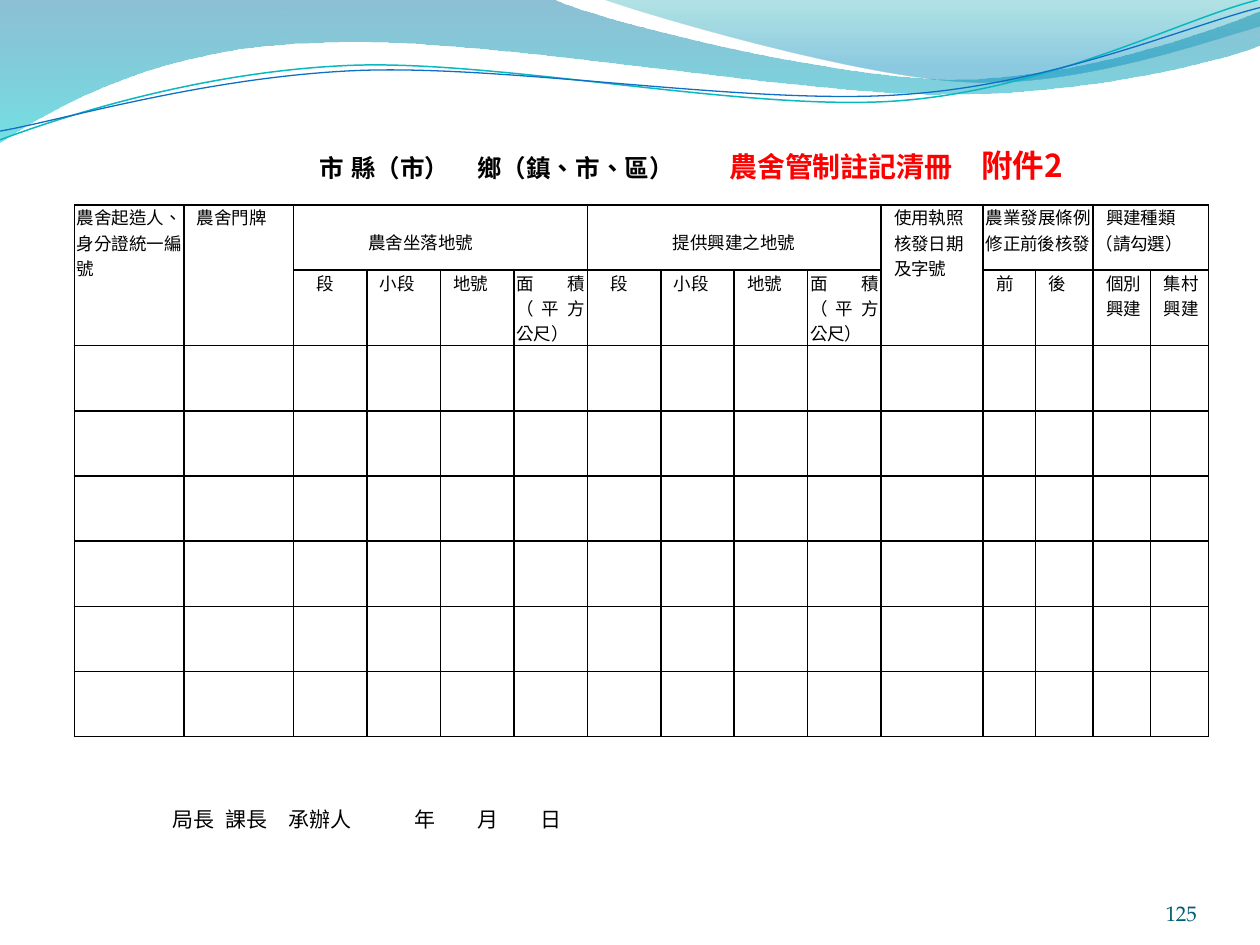
from lxml import etree
from pptx import Presentation
from pptx.dml.color import RGBColor
from pptx.enum.text import MSO_ANCHOR, PP_ALIGN
from pptx.oxml.ns import qn
from pptx.util import Pt

COLORS = {
    "black": "000000", "red": "FF0000", "number": "045D75",
    "teal": "00A1A9", "sky": "008BBF", "ocean": "0074A1", "aqua": "00C6CF",
    "teal line": "0AB8BF", "blue line": "0F6FC6",
}
CJK = "Noto Sans CJK SC"


def add_run(paragraph, text, size, color="black", bold=False, font=CJK):
    run = paragraph.add_run()
    run.text = text
    formats = {"size": Pt(size), "bold": bold, "name": font}
    for name, value in formats.items():
        setattr(run.font, name, value)
    run.font.color.rgb = RGBColor.from_string(COLORS[color])
    run.font._element.set("lang", "zh-TW")
    etree.SubElement(run.font._element, qn("a:ea"), typeface=CJK)


def set_tabs(paragraph, indent, positions):
    """Set the first-line indent and tab stops, measured from the text edge."""
    properties = paragraph._p.get_or_add_pPr()
    properties.set("marL", "0")
    properties.set("indent", str(Pt(indent)))
    tab_list = etree.SubElement(properties, qn("a:tabLst"))
    for position in positions:
        etree.SubElement(tab_list, qn("a:tab"), pos=str(Pt(position)), algn="l")


presentation = Presentation()
presentation.slide_width, presentation.slide_height = Pt(720), Pt(540)
slide = presentation.slides.add_slide(presentation.slide_layouts[6])

# Waves: start point, then lines (x, y) or Bezier curves (two controls and an end)
# Gradient stops are (position, colour, opacity in percent)
waves = [
    {"start": (0, 0),
     "segments": [(316.8, 0), (342.7, 12.2, 478.1, 45.4, 545.8, 45.4),
                  (614.2, 45.4, 689.8, 18.7, 720, 6.5), (720, 25.9),
                  (707.8, 31.7, 626.4, 54.7, 537.1, 54),
                  (447.8, 54, 275, 20.2, 185, 24.5),
                  (92.9, 25.9, 33.1, 59.8, 0, 81.4)],
     "stops": [(0, "ocean", 45), (1, "aqua", 55)]},
    {"start": (344.9, 0),
     "segments": [(366.5, 7.9, 491, 44.6, 553.7, 46.8),
                  (616.3, 49.7, 691.9, 23, 720, 15.1), (720, 0)],
     "stops": [(0, "teal", 30), (0.8, "sky", 45)]},
    {"start": (0, 79.9),
     "segments": [(34.6, 67, 113.8, 41, 199.4, 37.4),
                  (284.4, 33.8, 427, 64.1, 513.4, 57.6),
                  (599.8, 51.1, 675.4, 10.8, 718.6, 0)],
     "line": ("teal line", 0.85)},
    {"start": (0, 74.9),
     "segments": [(33.8, 69.1, 118.1, 43.9, 203.8, 40.3),
                  (290.2, 36.7, 429.8, 60.5, 516.2, 54),
                  (601.9, 48.2, 677.5, 15.1, 720, 4.3)],
     "line": ("blue line", 0.75)},
]
for wave in waves:
    builder = slide.shapes.build_freeform(*[Pt(value) for value in wave["start"]])
    ends = [(Pt(segment[-2]), Pt(segment[-1])) for segment in wave["segments"]]
    builder.add_line_segments(ends, close="stops" in wave)
    shape = builder.convert_to_shape()
    shape.shadow.inherit = False
    # Bend the straight segments that have control points
    for line, segment in zip(list(shape._element.iter(qn("a:lnTo"))), wave["segments"]):
        if len(segment) == 6:
            line.tag = qn("a:cubicBezTo")
            controls = [etree.Element(qn("a:pt"), x=str(Pt(x) - shape.left), y=str(Pt(y) - shape.top))
                        for x, y in (segment[:2], segment[2:4])]
            line[0:0] = controls
    if "stops" in wave:
        shape.line.fill.background()
        shape.fill.gradient()
        shape.fill.gradient_angle = 270
        for stop, (position, color, _) in zip(shape.fill.gradient_stops, wave["stops"]):
            stop.position = position
            stop.color.rgb = RGBColor.from_string(COLORS[color])
        for element, (_, _, opacity) in zip(shape._element.spPr.iter(qn("a:srgbClr")), wave["stops"]):
            etree.SubElement(element, qn("a:alpha"), val=str(opacity * 1000))
    else:
        color, width = wave["line"]
        shape.fill.background()
        shape.line.color.rgb = RGBColor.from_string(COLORS[color])
        shape.line.width = Pt(width)

# Register table
widths = [62.6] * 2 + [42] * 8 + [58.3, 30] + [32.9] * 3
row_count, row_height = 8, 37.26
table = slide.shapes.add_table(row_count, len(widths), Pt(42.5), Pt(117),
                               Pt(sum(widths)), Pt(row_count * row_height)).table
table.first_row = table.horz_banding = False
for column, width in zip(table.columns, widths):
    column.width = Pt(width)
for row in table.rows:
    row.height = Pt(row_height)
for cell in table.iter_cells():
    for side in ("a:lnL", "a:lnR", "a:lnT", "a:lnB"):
        border = etree.SubElement(cell._tc.get_or_add_tcPr(), qn(side), w=str(Pt(1)))
        fill = etree.SubElement(border, qn("a:solidFill"))
        etree.SubElement(fill, qn("a:srgbClr"), val=COLORS["black"])
    cell.fill.background()

# Headings: row, column, row span, column span, top margin, [(text, first-line indent)]
headings = [
    (0, 0, 2, 1, 0, [("農舍起造人、身分證統一編號", 0)]),
    (0, 1, 2, 1, 0, [("農舍門牌", 6)]),
    (0, 2, 1, 4, 14.3, [("農舍坐落地號", 41.5)]),
    (0, 6, 1, 4, 14.3, [("提供興建之地號", 47.5)]),
    (0, 10, 2, 1, 0, [("使用執照", 6), ("核發日期", 6), ("及字號", 6)]),
    (0, 11, 1, 2, 0, [("農業發展條例修正前後核發", 0)]),
    (0, 13, 1, 2, 0, [("興建種類", 6), ("（請勾選）", 0)]),
    (1, 11, 1, 1, 0, [("前", 6)]),
    (1, 12, 1, 1, 0, [("後", 6)]),
    (1, 13, 1, 1, 0, [("個別興建", 0)]),
    (1, 14, 1, 1, 0, [("集村興建", 0)]),
]
for first in (2, 6):
    for offset, line in enumerate([("段", 12), ("小段", 6), ("地號", 6), ("面積（平方公尺）", 0)]):
        headings.append((1, first + offset, 1, 1, 0, [line]))

for row, column, row_span, column_span, top, lines in headings:
    cell = table.cell(row, column)
    if row_span * column_span > 1:
        cell.merge(table.cell(row + row_span - 1, column + column_span - 1))
    hanging = row == 1 and column >= 13
    formats = {"margin_left": Pt(1.4), "margin_right": Pt(1.4),
               "margin_top": Pt(top), "margin_bottom": 0}
    for name, value in formats.items():
        setattr(cell, name, value)
    for index, (text, indent) in enumerate(lines):
        frame = cell.text_frame
        paragraph = frame.add_paragraph() if index else frame.paragraphs[0]
        paragraph.alignment = PP_ALIGN.LEFT if hanging else PP_ALIGN.JUSTIFY
        properties = paragraph._p.get_or_add_pPr()
        properties.set("marL", str(Pt(6 if hanging else 0)))
        properties.set("indent", str(Pt(indent)))
        add_run(paragraph, text, 10, font="Times New Roman")

# Title and signature lines, above and below the table
frame = slide.shapes.add_textbox(Pt(49.7), Pt(77), Pt(648), Pt(404.6)).text_frame
frame.word_wrap = True
frame.vertical_anchor = MSO_ANCHOR.MIDDLE
title = frame.paragraphs[0]
set_tabs(title, 126, (155.7, 224.5, 337.1, 504.8))
add_run(title, "市\t縣（市）\t鄉（鎮、市、區）\t", 14, bold=True)
add_run(title, "農舍管制註記清冊\t", 16, "red", bold=True)
add_run(title, "附件2", 18, "red", bold=True)
signature = frame.add_paragraph()
signature.space_before = Pt(355.5)
set_tabs(signature, 41.6, (124.8, 191.1, 268.1, 287.7, 310.1))
add_run(signature, "局長\t課長\t承辦人\t年\t月\t日", 12)

# Page number
frame = slide.shapes.add_textbox(Pt(624.2), Pt(500.4), Pt(59.8), Pt(28.8)).text_frame
formats = {"margin_left": 0, "margin_right": 0, "margin_top": 0, "margin_bottom": 0,
           "word_wrap": True, "vertical_anchor": MSO_ANCHOR.BOTTOM}
for name, value in formats.items():
    setattr(frame, name, value)
number = frame.paragraphs[0]
number.alignment = PP_ALIGN.RIGHT
add_run(number, "125", 12, "number", font="TeX Gyre Pagella")

presentation.save("out.pptx")
